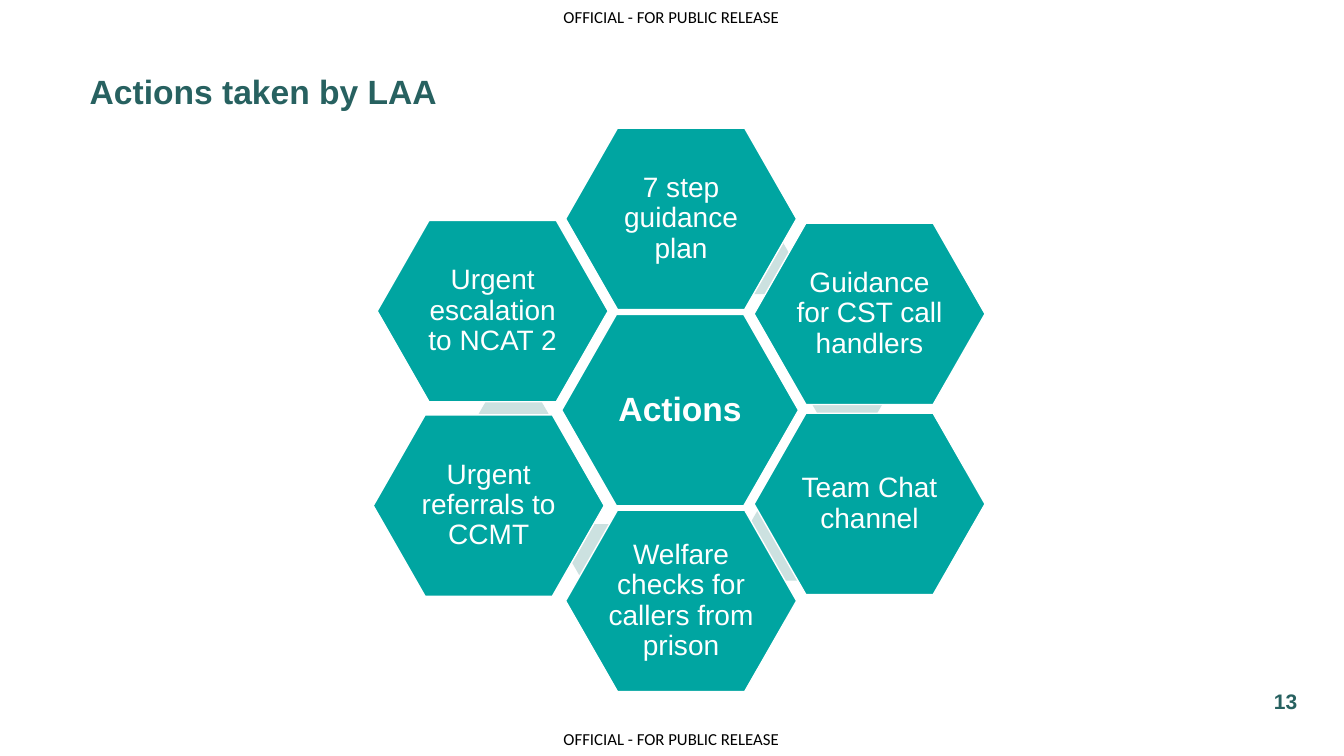
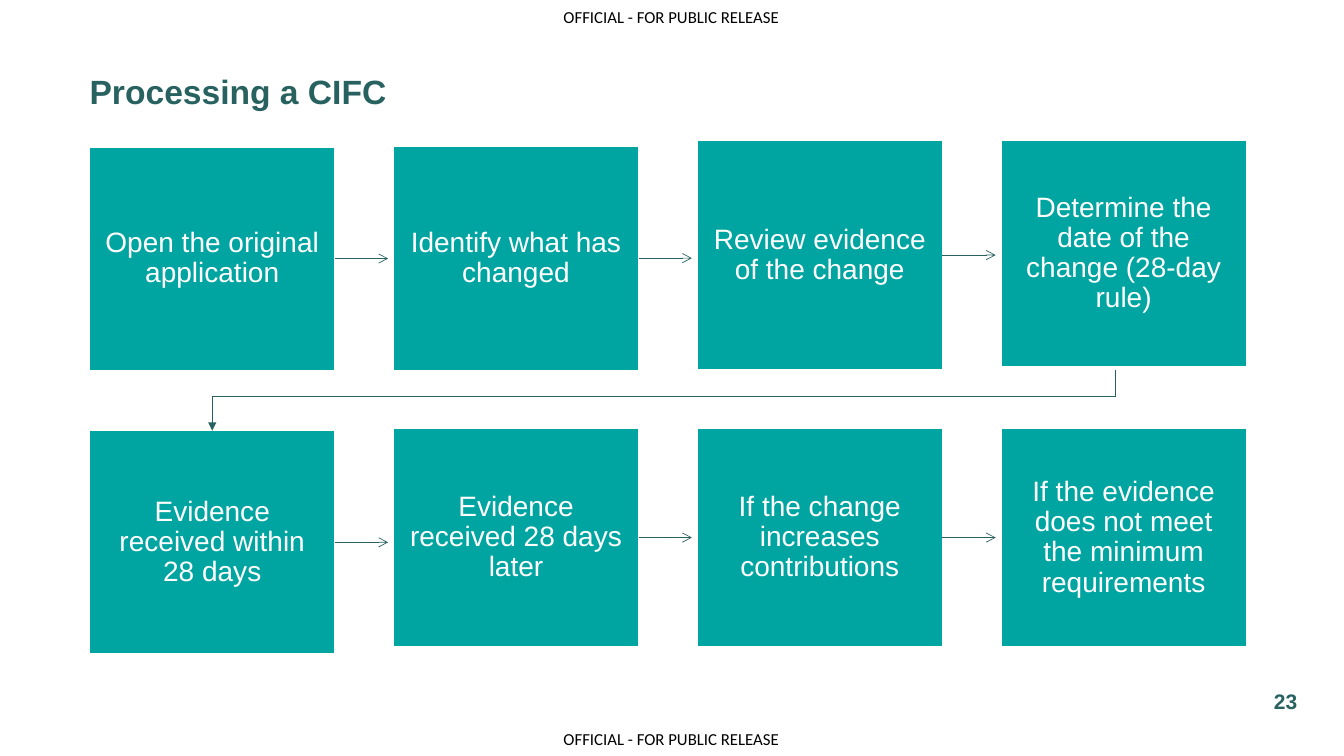
"""Build two slides: a hexagon cluster of actions and a process flow."""
from lxml import etree
from pptx import Presentation
from pptx.dml.color import RGBColor
from pptx.enum.shapes import MSO_CONNECTOR, MSO_SHAPE
from pptx.enum.text import MSO_ANCHOR, MSO_AUTO_SIZE, PP_ALIGN
from pptx.oxml.ns import qn
from pptx.util import Pt

HEXAGON, RECTANGLE = MSO_SHAPE.HEXAGON, MSO_SHAPE.RECTANGLE
STRAIGHT = MSO_CONNECTOR.STRAIGHT
LEFT, CENTER = PP_ALIGN.LEFT, PP_ALIGN.CENTER
TOP, MIDDLE = MSO_ANCHOR.TOP, MSO_ANCHOR.MIDDLE
NO_FIT = MSO_AUTO_SIZE.NONE

COLORS = {"teal": "00A5A1", "dark": "276160", "pale": "CCE1E0",
          "white": "FFFFFF", "black": "000000"}
MARKING = "OFFICIAL - FOR PUBLIC RELEASE"
SITE_TOP, SITE_RIGHT = 0, 3

HEX_W, HEX_H = 165, 129.6
HEXAGONS = [
    ("7 step guidance plan", 404, 91.5),
    ("Guidance for CST call handlers", 538.6, 159.4),
    ("Team Chat channel", 538.6, 295.2),
    ("Welfare checks for callers from prison", 404, 364.4),
    ("Urgent referrals to CCMT", 266.6, 296.4),
    ("Urgent escalation to NCAT 2", 269.4, 157.4),
]
ACCENT_W, ACCENT_H = 59.8, 51.1
ACCENTS = [(506, 159), (575.3, 254.9), (527, 363.6), (407.5, 374.4), (337, 278.6)]

BOX_LEFT, BOX_W, BOX_STEP, ARROW_LEN = 64, 175.2, 217, 38
STEP_ROWS = [
    [("Open the original application", 104.9, 159.6),
     ("Identify what has changed", 104.2, 160.4),
     ("Review evidence of the change", 100.1, 164.2),
     ("Determine the date of the change (28-day rule)", 100.1, 162)],
    [("Evidence received within 28 days", 307.6, 159.6),
     ("Evidence received 28 days later", 306.2, 155.6),
     ("If the change increases contributions", 306.2, 155.6),
     ("If the evidence does not meet the minimum requirements", 306.2, 155.6)],
]
RETURN_X, RETURN_TOP, RETURN_Y = 797, 264.4, 283


def rgb(name):
    """Return the named colour."""
    return RGBColor.from_string(COLORS[name])


def put_text(sp, text, size=20, font="Arial", color="white", bold=False,
             align=CENTER, anchor=MIDDLE, spacing=None, inset=(0, 0), wrap=True):
    """Write one formatted paragraph into a shape."""
    tf = sp.text_frame
    tf.auto_size, tf.word_wrap, tf.vertical_anchor = NO_FIT, wrap, anchor
    tf.margin_left = tf.margin_right = Pt(inset[0])
    tf.margin_top = tf.margin_bottom = Pt(inset[1])
    p = tf.paragraphs[0]
    p.alignment, p.line_spacing = align, spacing
    r = p.add_run()
    r.text = text
    r.font.size, r.font.name, r.font.bold = Pt(size), font, bold
    r.font.color.rgb = rgb(color)


def add_label(slide, text, left, top, width, height, **fmt):
    """Add a text box and return it."""
    sp = slide.shapes.add_textbox(Pt(left), Pt(top), Pt(width), Pt(height))
    put_text(sp, text, **fmt)
    return sp


def add_block(slide, kind, left, top, width, height, fill="teal", line="white"):
    """Add a flat preset shape, outlined if a line colour is given."""
    sp = slide.shapes.add_shape(kind, Pt(left), Pt(top), Pt(width), Pt(height))
    sp.shadow.inherit = False
    sp.fill.solid()
    sp.fill.fore_color.rgb = rgb(fill)
    if line:
        sp.line.color.rgb = rgb(line)
        sp.line.width = Pt(1)
    else:
        sp.line.fill.background()
    return sp


def add_hexagon(slide, left, top, width, height, text=None, size=20, bold=False):
    """Add a labelled hexagon, or a pale accent when there is no text."""
    if text:
        sp = add_block(slide, HEXAGON, left, top, width, height)
        put_text(sp, text, size=size, bold=bold, spacing=0.9, inset=(2, 2))
    else:
        sp = add_block(slide, HEXAGON, left, top, width, height, "pale", None)
    sp.adjustments[0] = 0.286 if text else 0.289
    sp.adjustments[1] = 1.155


def add_line(slide, x1, y1, x2, y2, head=None, begin=None, end=None):
    """Add a thin straight connector, joined to shapes given as (shape, site)."""
    c = slide.shapes.add_connector(STRAIGHT, Pt(x1), Pt(y1), Pt(x2), Pt(y2))
    if begin:
        c.begin_connect(*begin)
    if end:
        c.end_connect(*end)
    c.line.color.rgb = rgb("dark")
    c.line.width = Pt(0.5)
    pr = c.element.spPr
    if head:
        etree.SubElement(pr.find(qn("a:ln")), qn("a:tailEnd"), type=head)
    etree.SubElement(pr, qn("a:effectLst"))


def add_markings(slide, layout):
    """Put the release markings on the shared layout."""
    for top in (5, 520.6):
        sp = add_label(slide, MARKING, 402.5, top, 157, 14.4, size=12, font="Calibri",
                       color="black", align=LEFT, anchor=TOP, wrap=False)
        layout.shapes.element.append(sp.element)


def add_slide(prs, layout, title, number):
    """Add a slide with its title and page number."""
    slide = prs.slides.add_slide(layout)
    put_text(slide.shapes.title, title, size=24, color="dark", bold=True, align=LEFT)
    add_label(slide, number, 900.7, 486.2, 35.3, 28.8, size=15, color="dark", bold=True)
    return slide


def draw_actions(slide):
    """Draw the hexagon cluster."""
    add_hexagon(slide, 401.2, 224.6, 169.2, 136.8, "Actions", size=24, bold=True)
    for left, top in ACCENTS:
        add_hexagon(slide, left, top, ACCENT_W, ACCENT_H)
    for text, left, top in HEXAGONS:
        add_hexagon(slide, left, top, HEX_W, HEX_H, text)


def draw_row(slide, steps):
    """Draw one row of boxes with arrows between them and return the first box."""
    boxes = []
    for i, (text, top, height) in enumerate(steps):
        left = BOX_LEFT + i * BOX_STEP
        sp = add_block(slide, RECTANGLE, left, top, BOX_W, height)
        put_text(sp, text, spacing=0.9, inset=(8.6, 9.4))
        boxes.append(sp)
        if i < len(steps) - 1:
            x, y = left + BOX_W, top + height / 2
            add_line(slide, x, y, x + ARROW_LEN, y, "arrow", begin=(sp, SITE_RIGHT))
    return boxes[0]


def draw_process(slide):
    """Draw both rows and the line that leads from one to the next."""
    first = [draw_row(slide, steps) for steps in STEP_ROWS][1]
    x = BOX_LEFT + BOX_W / 2
    add_line(slide, RETURN_X, RETURN_TOP, RETURN_X, RETURN_Y)
    add_line(slide, RETURN_X, RETURN_Y, x, RETURN_Y)
    add_line(slide, x, RETURN_Y, x, STEP_ROWS[1][0][1], "triangle", end=(first, SITE_TOP))


def main():
    """Build and save the presentation."""
    prs = Presentation()
    prs.slide_width, prs.slide_height = Pt(960), Pt(540)
    layout = prs.slide_layouts[5]
    title = layout.placeholders[0]
    title.left, title.top, title.width, title.height = Pt(64), Pt(29.6), Pt(844.6), Pt(70.6)
    actions = add_slide(prs, layout, "Actions taken by LAA", "13")
    add_markings(actions, layout)
    draw_actions(actions)
    draw_process(add_slide(prs, layout, "Processing a CIFC", "23"))
    prs.save("out.pptx")


if __name__ == "__main__":
    main()
